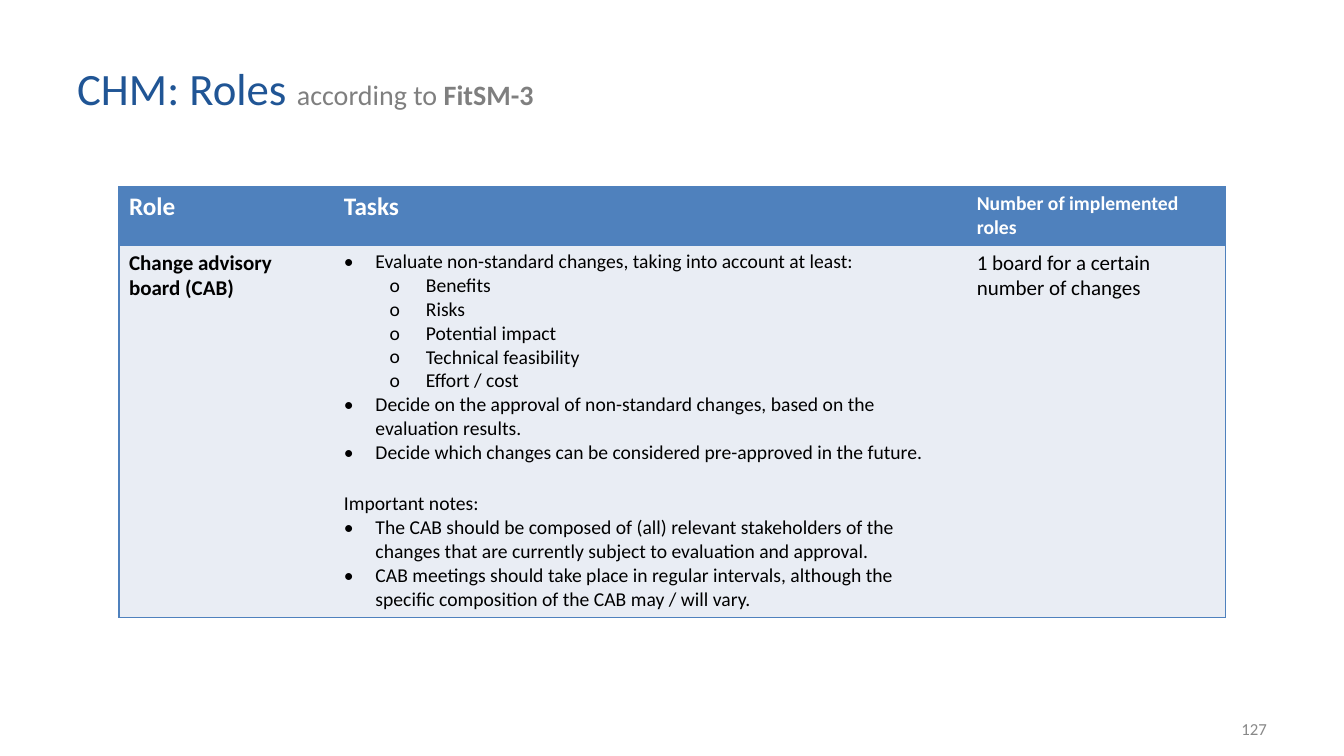
from dataclasses import dataclass

from lxml.etree import SubElement
from pptx import Presentation
from pptx.dml.color import RGBColor
from pptx.enum.text import MSO_ANCHOR, PP_ALIGN
from pptx.oxml.ns import qn
from pptx.slide import Slide
from pptx.table import _Cell
from pptx.text.text import TextFrame, _Paragraph
from pptx.util import Pt


@dataclass(frozen=True)
class Theme:
    font: str = "Calibri"
    title: str = "205595"
    subtitle: str = "7F7F7F"
    page_number: str = "888888"
    accent: str = "4F81BD"
    body_fill: str = "E9EDF4"
    white: str = "FFFFFF"
    black: str = "000000"
    title_size: float = 32
    subtitle_size: float = 20
    heading_size: float = 18
    role_size: float = 15
    task_size: float = 14
    number_size: float = 12
    border: float = 0.96


@dataclass(frozen=True)
class Bullet:
    mark: str
    left: float
    hanging: float


@dataclass(frozen=True)
class Line:
    text: str
    size: float
    color: str
    bold: bool = False
    bullet: Bullet | None = None
    space_before: float = 0


THEME = Theme()
NO_STYLE_NO_GRID = "{2D5ABB26-0587-4C30-8999-92F81FD0307C}"
DOT = Bullet("•", 22.5, 22.5)
CIRCLE = Bullet("o", 58.5, 26)


def task(text: str, bullet: Bullet | None = DOT, space_before: float = 0) -> Line:
    return Line(text, THEME.task_size, THEME.black, False, bullet, space_before)


TASKS = [
    task("Evaluate non-standard changes, taking into account at least:"),
    *(
        task(criterion, CIRCLE)
        for criterion in (
            "Benefits",
            "Risks",
            "Potential impact",
            "Technical feasibility",
            "Effort / cost",
        )
    ),
    task("Decide on the approval of non-standard changes, based on the evaluation results."),
    task("Decide which changes can be considered pre-approved in the future."),
    task("Important notes:", None, 19.5),
    task(
        "The CAB should be composed of (all) relevant stakeholders of the changes "
        "that are currently subject to evaluation and approval."
    ),
    task(
        "CAB meetings should take place in regular intervals, although the specific "
        "composition of the CAB may / will vary."
    ),
]
ROWS = [
    [
        [Line("Role", THEME.heading_size, THEME.white, True)],
        [Line("Tasks", THEME.heading_size, THEME.white, True)],
        [Line("Number of implemented roles", THEME.task_size, THEME.white, True)],
    ],
    [
        [Line("Change advisory board (CAB)", THEME.role_size, THEME.black, True)],
        TASKS,
        [Line("1 board for a certain number of changes", THEME.role_size, THEME.black)],
    ],
]
ROW_FILLS = [THEME.accent, THEME.body_fill]
ROW_HEIGHTS = [41.5, 266]
COLUMN_WIDTHS = [153.5, 452, 185]


def add_span(
    para: _Paragraph, text: str, *, size: float, color: str, bold: bool = False
) -> None:
    span = para.add_run()
    span.text = text
    span.font.name = THEME.font
    span.font.size = Pt(size)
    span.font.bold = bold
    span.font.color.rgb = RGBColor.from_string(color)


def add_bullet(para: _Paragraph, bullet: Bullet) -> None:
    properties = para._p.get_or_add_pPr()
    properties.set("marL", str(Pt(bullet.left)))
    properties.set("indent", str(-Pt(bullet.hanging)))
    color = SubElement(properties, qn("a:buClr"))
    SubElement(color, qn("a:srgbClr"), val=THEME.black)
    SubElement(properties, qn("a:buFont"), typeface=THEME.font)
    SubElement(properties, qn("a:buChar"), char=bullet.mark)


def write_lines(frame: TextFrame, lines: list[Line]) -> None:
    for index, line in enumerate(lines):
        para = frame.add_paragraph() if index else frame.paragraphs[0]
        if line.bullet:
            add_bullet(para, line.bullet)
        if line.space_before:
            para.space_before = Pt(line.space_before)
        add_span(para, line.text, size=line.size, color=line.color, bold=line.bold)


def add_text_box(
    page: Slide, left: float, top: float, width: float, height: float
) -> _Paragraph:
    """Add a wrapped, vertically centred box and return its first paragraph."""
    box = page.shapes.add_textbox(Pt(left), Pt(top), Pt(width), Pt(height))
    box.text_frame.word_wrap = True
    box.text_frame.vertical_anchor = MSO_ANCHOR.MIDDLE
    return box.text_frame.paragraphs[0]


def add_borders(cell: _Cell, sides: str) -> None:
    """Draw the given sides (L, R, T, B, in that order); call before filling the cell."""
    properties = cell._tc.get_or_add_tcPr()
    for side in sides:
        border = SubElement(properties, qn(f"a:ln{side}"), w=str(Pt(THEME.border)))
        fill = SubElement(border, qn("a:solidFill"))
        SubElement(fill, qn("a:srgbClr"), val=THEME.accent)


def add_roles_table(page: Slide, left: float, top: float) -> None:
    table = page.shapes.add_table(
        len(ROWS), len(COLUMN_WIDTHS), Pt(left), Pt(top),
        Pt(sum(COLUMN_WIDTHS)), Pt(sum(ROW_HEIGHTS)),
    ).table
    table.first_row = table.horz_banding = False
    table._tbl.tblPr.find(qn("a:tableStyleId")).text = NO_STYLE_NO_GRID
    for column, width in zip(table.columns, COLUMN_WIDTHS):
        column.width = Pt(width)
    last_column = len(COLUMN_WIDTHS) - 1
    for row_index, row in enumerate(ROWS):
        table.rows[row_index].height = Pt(ROW_HEIGHTS[row_index])
        for column_index, lines in enumerate(row):
            cell = table.cell(row_index, column_index)
            outer = {0: "L", last_column: "R"}.get(column_index, "")
            add_borders(cell, outer + "TB")
            cell.fill.solid()
            cell.fill.fore_color.rgb = RGBColor.from_string(ROW_FILLS[row_index])
            write_lines(cell.text_frame, lines)


def main() -> None:
    deck = Presentation()
    deck.slide_width, deck.slide_height = Pt(960), Pt(540)
    page = deck.slides.add_slide(deck.slide_layouts[6])

    title = add_text_box(page, 48, 21.5, 713, 82)
    add_span(title, "CHM: Roles ", size=THEME.title_size, color=THEME.title)
    subtitle = {"size": THEME.subtitle_size, "color": THEME.subtitle}
    add_span(title, "according to ", **subtitle)
    add_span(title, "FitSM-3", bold=True, **subtitle)

    add_roles_table(page, 85, 133.5)

    number = add_text_box(page, 688, 506, 224, 29)
    number.alignment = PP_ALIGN.RIGHT
    add_span(number, "127", size=THEME.number_size, color=THEME.page_number)

    deck.save("out.pptx")


if __name__ == "__main__":
    main()
